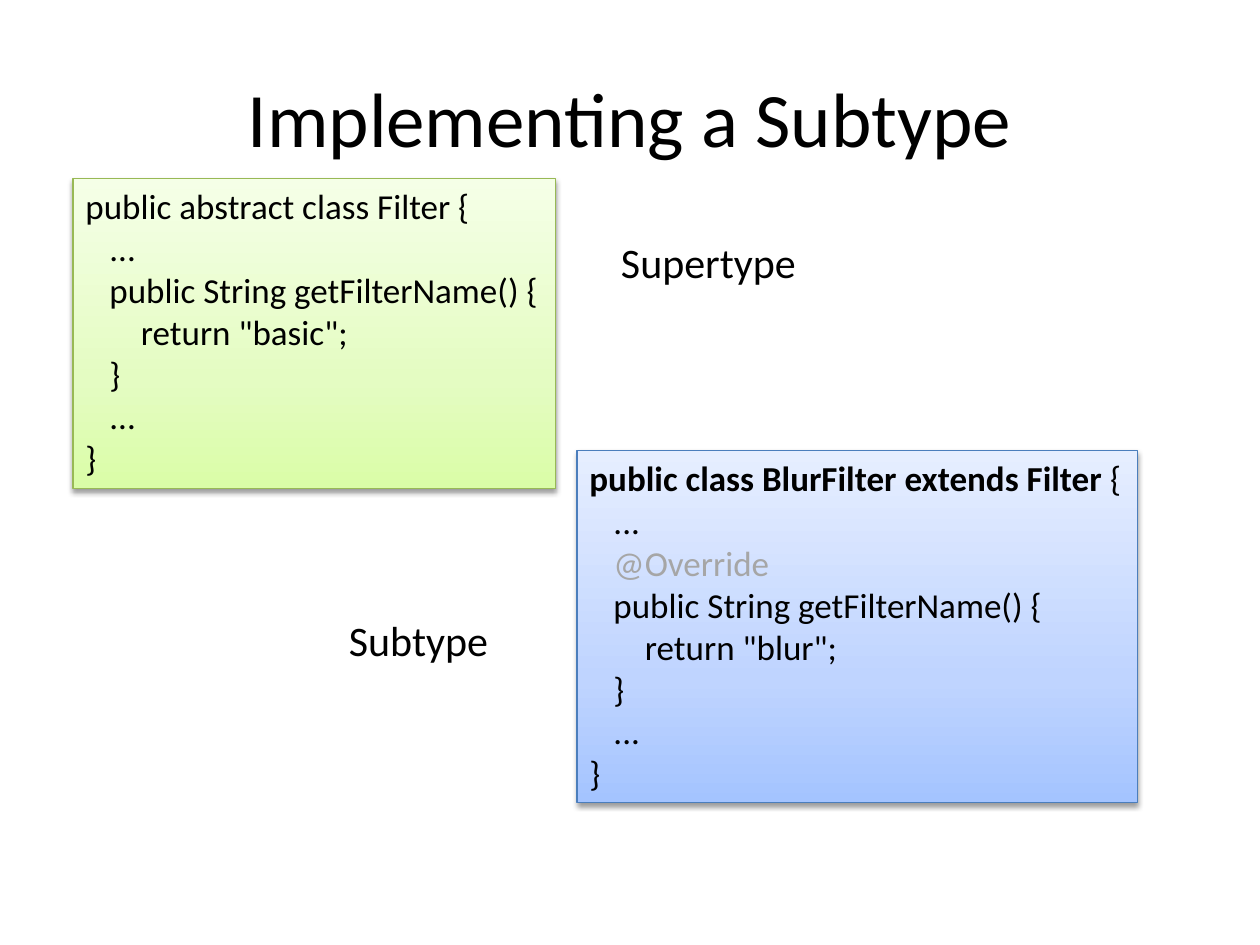
from lxml.etree import SubElement
from pptx import Presentation
from pptx.dml.color import RGBColor
from pptx.enum.shapes import MSO_SHAPE as Shape
from pptx.enum.text import MSO_ANCHOR as Anchor, MSO_AUTO_SIZE as AutoSize, PP_ALIGN as Align
from pptx.oxml.ns import qn
from pptx.util import Inches, Pt

BLACK = RGBColor(0x00, 0x00, 0x00)
GRAY = RGBColor(0xA6, 0xA6, 0xA6)
GREEN_LINE = RGBColor(0x98, 0xB9, 0x55)
GREEN_STOPS = (RGBColor(0xDA, 0xFD, 0xA7), RGBColor(0xE4, 0xFC, 0xC2), RGBColor(0xF5, 0xFF, 0xE7))
BLUE_LINE = RGBColor(0x4B, 0x7E, 0xBC)
BLUE_STOPS = (RGBColor(0xA4, 0xC4, 0xFF), RGBColor(0xBF, 0xD4, 0xFF), RGBColor(0xE6, 0xEE, 0xFF))
STOP_PERCENTS = (0, 35, 100)

WIDTH, HEIGHT = 10, 7.5
FONT = "Calibri"
CODE_INDENTS = (0, 0.19, 0.44)


def place(left, top, width, height):
    return (Inches(left * WIDTH), Inches(top * HEIGHT),
            Inches(width * WIDTH), Inches(height * HEIGHT))


def style(paragraph, size, color=BLACK):
    paragraph.font.name = FONT
    paragraph.font.size = Pt(size)
    paragraph.font.color.rgb = color


def add_label(slide, words, box, size):
    frame = slide.shapes.add_textbox(*place(*box)).text_frame
    frame.word_wrap = False
    frame.auto_size = AutoSize.SHAPE_TO_FIT_TEXT
    frame.text = words
    style(frame.paragraphs[0], size)
    return frame


def add_title(slide, words):
    frame = add_label(slide, words, (0.05, 0.04, 0.9, 1 / 6), 44)
    frame.auto_size = AutoSize.NONE
    frame.word_wrap = True
    frame.vertical_anchor = Anchor.MIDDLE
    frame.paragraphs[0].alignment = Align.CENTER


def paint_gradient(panel, colors):
    panel.fill.gradient()
    panel.fill.gradient_angle = 90
    stops = panel.fill._fill._gradFill.find(qn("a:gsLst"))
    for stop in list(stops):
        stops.remove(stop)
    for percent, color in zip(STOP_PERCENTS, colors):
        stop = SubElement(stops, qn("a:gs"), pos=str(percent * 1000))
        SubElement(stop, qn("a:srgbClr"), val=str(color))


def cast_shadow(panel):
    panel.shadow.inherit = False
    effects = panel._element.spPr.find(qn("a:effectLst"))
    shadow = SubElement(effects, qn("a:outerShdw"), blurRad=str(Pt(3.1)), dist=str(Pt(1.6)),
                        dir="5400000", rotWithShape="0")
    tint = SubElement(shadow, qn("a:srgbClr"), val=str(BLACK))
    SubElement(tint, qn("a:alpha"), val="38000")


def add_code(slide, box, colors, outline, lines):
    panel = slide.shapes.add_shape(Shape.RECTANGLE, *place(*box))
    paint_gradient(panel, colors)
    panel.line.color.rgb = outline
    panel.line.width = Pt(0.75)
    cast_shadow(panel)
    frame = panel.text_frame
    frame.word_wrap = False
    frame.auto_size = AutoSize.SHAPE_TO_FIT_TEXT
    frame.vertical_anchor = Anchor.TOP
    frame.text = "\n".join(words for level, words in lines)
    for paragraph, (level, words) in zip(frame.paragraphs, lines):
        paragraph.alignment = Align.LEFT
        paragraph._p.get_or_add_pPr().set("marL", str(Inches(CODE_INDENTS[level])))
        style(paragraph, 20, GRAY if words.startswith("@") else BLACK)
    return frame


def class_body(filter_name, annotations=()):
    return [(1, "..."), *((1, note) for note in annotations),
            (1, "public String getFilterName() {"),
            (2, f'return "{filter_name}";'), (1, "}"), (1, "..."), (0, "}")]


def main():
    deck = Presentation()
    deck.slide_width, deck.slide_height = Inches(WIDTH), Inches(HEIGHT)
    slide = deck.slides.add_slide(deck.slide_layouts[6])

    add_title(slide, "Implementing a Subtype")
    subtype = add_code(slide, (0.458, 0.477, 0.445, 0.372), BLUE_STOPS, BLUE_LINE,
                       [(0, "public class BlurFilter extends Filter"),
                        *class_body("blur", ["@Override"])])
    declaration = subtype.paragraphs[0]
    declaration.runs[0].font.bold = True
    declaration.add_run().text = " {"
    add_code(slide, (0.058, 0.189, 0.383, 0.328), GREEN_STOPS, GREEN_LINE,
             [(0, "public abstract class Filter {"), *class_body("basic")])
    add_label(slide, "Supertype", (0.483, 0.244, 0.161, 0.067), 24)
    add_label(slide, "Subtype", (0.267, 0.644, 0.132, 0.067), 24)

    deck.save("out.pptx")


if __name__ == "__main__":
    main()
